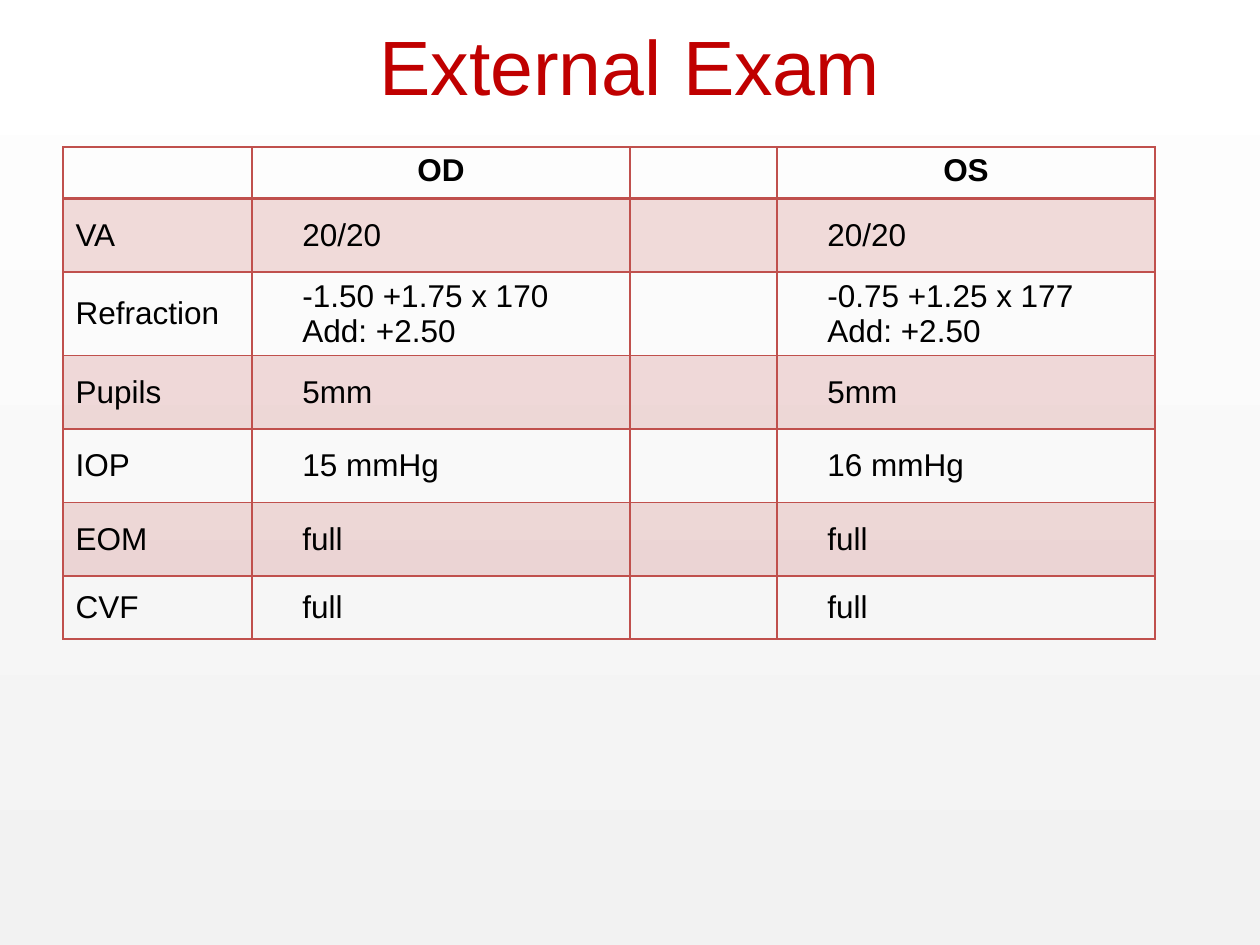
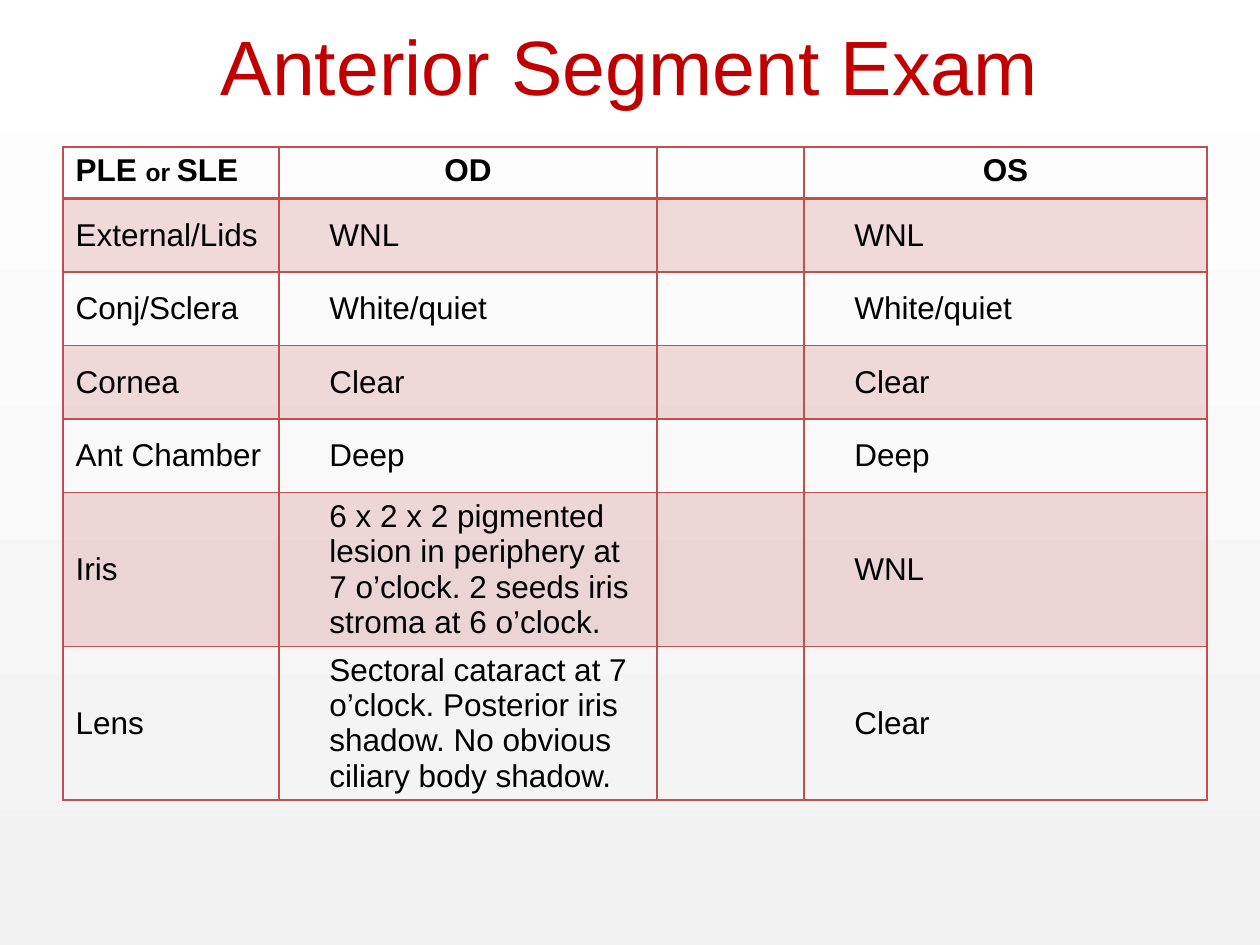
from lxml.etree import SubElement
from pptx import Presentation
from pptx.dml.color import RGBColor
from pptx.enum.shapes import MSO_SHAPE
from pptx.enum.text import MSO_ANCHOR as Anchor, PP_ALIGN as Align
from pptx.oxml import parse_xml
from pptx.oxml.ns import nsdecls, qn
from pptx.util import Pt

COLORS = {"title": "C00000", "text": "000000", "accent": "C0504D",
          "fade_bottom": "F2F2F2", "fade_top": "FFFFFF"}
ROW_HEIGHTS = [29.2, 42.4, 42, 42, 42, 42, 36]


def rgb(name):
    return RGBColor.from_string(COLORS[name])


class ExamDeck:
    font = "Arial"
    title_size = 44
    text_size = 18
    left = 36
    table_top = 84
    value_indent = 28.8

    def __init__(self):
        self.deck = Presentation()
        self.deck.slide_width, self.deck.slide_height = Pt(720), Pt(540)
        self.page = None

    def add_page(self, title):
        self.page = self.deck.slides.add_slide(self.deck.slide_layouts[5])
        if len(self.deck.slides) == 1:
            self.add_master_fade()
        box = self.page.shapes.title
        box.left, box.top, box.width, box.height = Pt(self.left), Pt(-8), Pt(648), Pt(90)
        box.text_frame.vertical_anchor = Anchor.MIDDLE
        para = box.text_frame.paragraphs[0]
        para.alignment = Align.CENTER
        self.add_span(para, title, self.title_size, "title")

    def add_master_fade(self):
        """Draw the gradient once and move it to the back of the slide master."""
        fade = self.page.shapes.add_shape(MSO_SHAPE.RECTANGLE, 0, 0, Pt(720), Pt(540))
        fade.shadow.inherit = False
        fade.line.fill.background()
        fade.fill.gradient()
        fade.fill.gradient_angle = 90
        for stop, name in zip(fade.fill.gradient_stops, ("fade_bottom", "fade_top")):
            stop.color.rgb = rgb(name)
        fade.element.nvSpPr.cNvPr.set("id", "100")
        self.deck.slide_master.shapes.element.insert(2, fade.element)

    def add_span(self, para, text, size, color="text", bold=False):
        span = para.add_run()
        span.text = text
        span.font.name, span.font.size, span.font.bold = self.font, Pt(size), bold
        span.font.color.rgb = rgb(color)

    def add_table(self, widths, header, rows):
        """Each header cell is a list of (text, size); each row is label, OD, OS."""
        frame = self.page.shapes.add_table(
            len(rows) + 1, len(widths), Pt(self.left), Pt(self.table_top),
            Pt(sum(widths)), Pt(sum(ROW_HEIGHTS)))
        table = frame.table
        table.first_row = table.horz_banding = False
        for column, width in zip(table.columns, widths):
            column.width = Pt(width)
        for row, height in zip(table.rows, ROW_HEIGHTS):
            row.height = Pt(height)
        for index, spans in enumerate(header):
            self.fill_header(table.cell(0, index), spans, centred=index > 0)
        for number, (label, od, os_value) in enumerate(rows, start=1):
            for index, text in enumerate((label, od, "", os_value)):
                self.fill_body(table.cell(number, index), text, number, indented=index > 0)

    def fill_header(self, cell, spans, centred):
        para = cell.text_frame.paragraphs[0]
        if centred:
            para.alignment = Align.CENTER
        for text, size in spans:
            self.add_span(para, text, size, bold=True)
        cell.fill.background()
        self.add_borders(cell, bottom=2)

    def fill_body(self, cell, text, number, indented):
        cell.vertical_anchor = Anchor.MIDDLE
        if text:
            if indented:
                cell.margin_left = Pt(self.value_indent)
            frame = cell.text_frame
            for index, line in enumerate(text.split("\n")):
                para = frame.add_paragraph() if index else frame.paragraphs[0]
                self.add_span(para, line, self.text_size)
        if number % 2:
            cell.fill.solid()
            cell.fill.fore_color.rgb = rgb("accent")
            for color in cell._tc.tcPr.iter(qn("a:srgbClr")):
                SubElement(color, qn("a:alpha"), val="20000")
        else:
            cell.fill.background()
        self.add_borders(cell, top=2 if number == 1 else 1)

    def add_borders(self, cell, top=1, bottom=1):
        sides = (("L", 1), ("R", 1), ("T", top), ("B", bottom))
        for index, (side, width) in enumerate(sides):
            cell._tc.tcPr.insert(index, parse_xml(
                f'<a:ln{side} {nsdecls("a")} w="{Pt(width)}"><a:solidFill>'
                f'<a:srgbClr val="{COLORS["accent"]}"/></a:solidFill></a:ln{side}>'))


def main():
    exam = ExamDeck()
    od, os_header = [("OD", 18)], [("OS", 18)]

    exam.add_page("External Exam")
    exam.add_table([108, 216, 84, 216], [[], od, [], os_header], [
        ("VA", "20/20", "20/20"),
        ("Refraction", "-1.50 +1.75 x 170\nAdd: +2.50", "-0.75 +1.25 x 177\nAdd: +2.50"),
        ("Pupils", "5mm", "5mm"),
        ("IOP", "15 mmHg", "16 mmHg"),
        ("EOM", "full", "full"),
        ("CVF", "full", "full"),
    ])

    exam.add_page("Anterior Segment Exam")
    lamp = [("PLE ", 18), ("or ", 14), ("SLE", 18)]
    exam.add_table([123.4, 216, 84, 230.4], [lamp, od, [], os_header], [
        ("External/Lids", "WNL", "WNL"),
        ("Conj/Sclera", "White/quiet", "White/quiet"),
        ("Cornea", "Clear", "Clear"),
        ("Ant Chamber", "Deep", "Deep"),
        ("Iris", "6 x 2 x 2 pigmented lesion in periphery at 7 o’clock. "
                 "2 seeds iris stroma at 6 o’clock.", "WNL"),
        ("Lens", "Sectoral cataract at 7 o’clock. Posterior iris shadow. "
                 "No obvious ciliary body shadow.", "Clear"),
    ])
    exam.deck.save("out.pptx")


if __name__ == "__main__":
    main()
